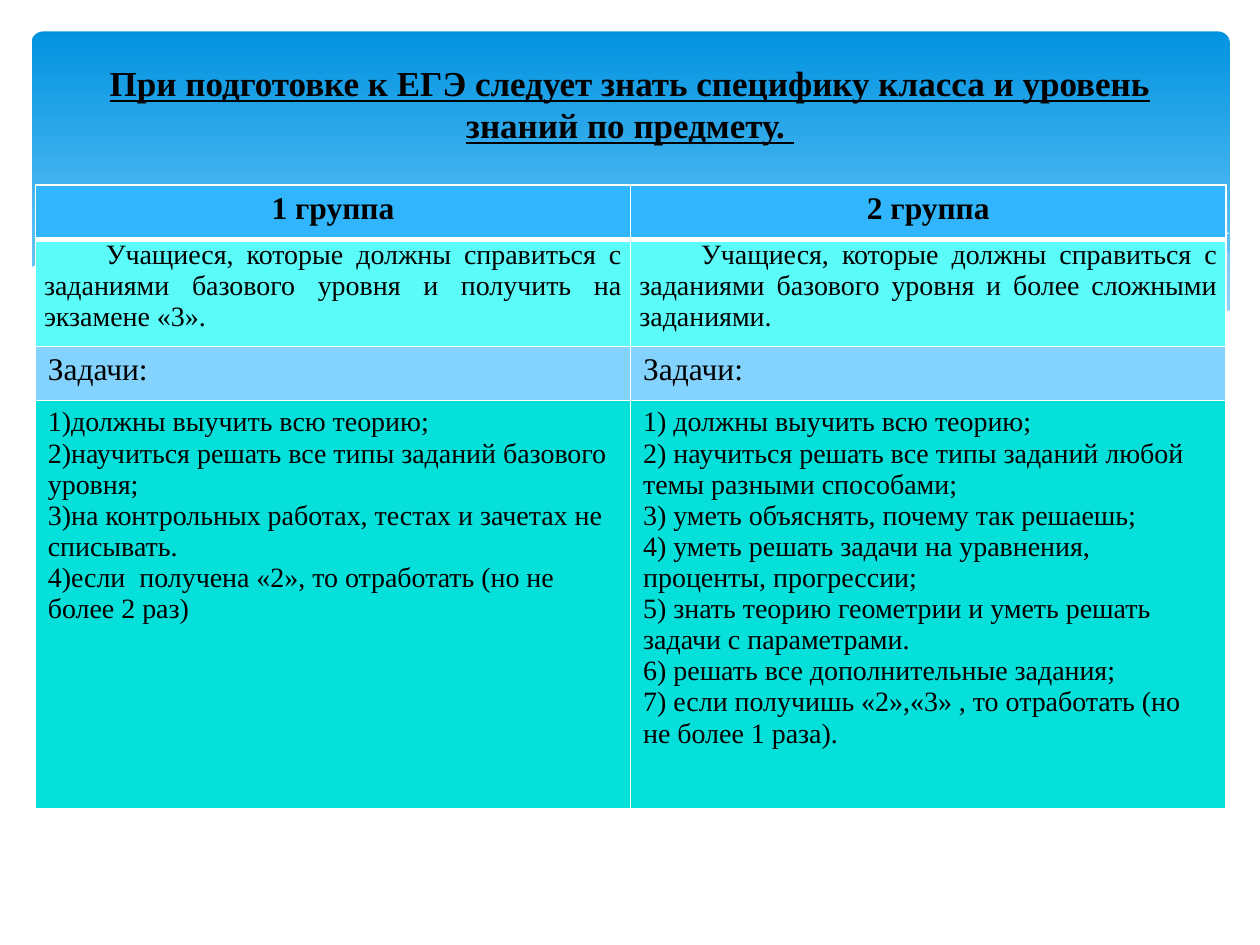
import lxml.etree
import pptx
import pptx.dml.color
import pptx.enum.shapes
import pptx.enum.text
import pptx.oxml.ns
import pptx.util

RGB = pptx.dml.color.RGBColor.from_string
ALIGN = pptx.enum.text.PP_ALIGN
SHAPE = pptx.enum.shapes.MSO_SHAPE
qn = pptx.oxml.ns.qn

theme = {
    "font": "Times New Roman", "text": "000000", "white": "FFFFFF", "mist": "C6E7FC",
    "sky": ("0293E0", "83D3FE"),
    "rows": ("31B6FD", "5AFBF8", "83D3FE", "05E0DB"),
    "title": 20, "sizes": (18, 16, 18, 16),
}

prs = pptx.Presentation()
prs.slide_width, prs.slide_height = pptx.util.Inches(10), pptx.util.Inches(7.5)
col = row = prs.slide_width // 10
s = prs.slides.add_slide(prs.slide_layouts[6])


def add_text(p, text, size, bold=False, underline=False):
    r = p.add_run()
    r.text = text
    r.font.name, r.font.size = theme["font"], pptx.util.Pt(size)
    r.font.bold, r.font.underline = bold, underline
    r.font.color.rgb = RGB(theme["text"])


def add_wave(points, color, alpha=100, closed=True):
    builder = s.shapes.build_freeform(*points[0], scale=col / 100)
    builder.add_line_segments(points[1:], close=closed)
    sp = builder.convert_to_shape()
    sp.shadow.inherit = False
    if not closed:
        sp.fill.background()
        sp.line.color.rgb, sp.line.width = RGB(color), 0
        return
    sp.line.fill.background()
    sp.fill.solid()
    sp.fill.fore_color.rgb = RGB(color)
    if alpha < 100:
        clr = sp.fill._xPr.find(".//" + qn("a:srgbClr"))
        lxml.etree.SubElement(clr, qn("a:alpha"), val=str(alpha * 1000))


sky = s.shapes.add_shape(SHAPE.ROUNDED_RECTANGLE, int(0.25 * col), int(0.25 * row),
                         int(9.51 * col), int(2.7 * row))
sky.shadow.inherit = False
sky.adjustments[0] = 0.034
sky.line.fill.background()
sky.fill.gradient()
sky.fill.gradient_angle = 270
for stop, color, position in zip(sky.fill.gradient_stops, theme["sky"], (0, 0.9)):
    stop.color.rgb, stop.position = RGB(color), position

add_wave([(976, 200), (935, 207), (891, 216), (832, 230), (779, 242), (729, 253), (661, 265),
          (705, 271), (757, 276), (803, 278), (854, 276), (897, 270), (935, 262), (976, 247)],
         theme["mist"], 29)
add_wave([(893, 273), (837, 265), (775, 254), (706, 240), (629, 222), (569, 208), (514, 198),
          (465, 191), (420, 187), (380, 185), (328, 187), (286, 191), (342, 199), (404, 211),
          (449, 222), (530, 240), (601, 255), (665, 266), (722, 274), (773, 277), (818, 278),
          (857, 277)], theme["mist"], 40)
add_wave([(309, 195), (344, 190), (387, 187), (433, 187), (489, 190), (556, 197), (636, 208),
          (695, 219), (760, 233), (831, 251), (907, 272)], theme["white"], closed=False)
add_wave([(613, 257), (672, 241), (748, 223), (806, 210), (866, 199), (924, 190), (975, 185)],
         theme["white"], closed=False)
add_wave([(977, 246), (940, 259), (899, 269), (850, 275), (809, 277), (761, 275), (708, 270),
          (648, 262), (579, 250), (503, 233), (447, 220), (391, 207), (340, 197), (292, 190),
          (250, 186), (211, 184), (161, 184), (119, 187), (85, 193), (59, 199), (40, 205),
          (23, 213), (23, 329), (977, 329)], theme["white"])

table_rows = [
    ("1 группа", "2 группа"),
    ("Учащиеся, которые должны справиться с заданиями базового уровня и получить на экзамене «3».",
     "Учащиеся, которые должны справиться с заданиями базового уровня и более сложными заданиями."),
    ("Задачи:", "Задачи:"),
    ("1)должны выучить всю теорию;\n"
     "2)научиться решать все типы заданий базового уровня;\n"
     "3)на контрольных работах, тестах и зачетах не списывать.\n"
     "4)если  получена «2», то отработать (но не более 2 раз)",
     "1) должны выучить всю теорию;\n"
     "2) научиться решать все типы заданий любой темы разными способами;\n"
     "3) уметь объяснять, почему так решаешь;\n"
     "4) уметь решать задачи на уравнения, проценты, прогрессии;\n"
     "5) знать теорию геометрии и уметь решать задачи с параметрами.\n"
     "6) решать все дополнительные задания;\n"
     "7) если получишь «2»,«3» , то отработать (но не более 1 раза)."),
]
heights = (0.43, 0.85, 0.43, 3.24)
aligns = (ALIGN.CENTER, ALIGN.JUSTIFY, ALIGN.LEFT, ALIGN.LEFT)
table = s.shapes.add_table(4, 2, int(0.28 * col), int(1.47 * row),
                           int(9.45 * col), int(sum(heights) * row)).table

for i, texts in enumerate(table_rows):
    table.rows[i].height = int(heights[i] * row)
    for j, text in enumerate(texts):
        cell = table.cell(i, j)
        tcPr = cell._tc.get_or_add_tcPr()
        for side in ("L", "R", "T", "B"):
            thick = (i, side) in ((0, "B"), (1, "T"))
            ln = lxml.etree.SubElement(tcPr, qn("a:ln" + side),
                                       w=str(pptx.util.Pt(3 if thick else 1)))
            fill = lxml.etree.SubElement(ln, qn("a:solidFill"))
            lxml.etree.SubElement(fill, qn("a:srgbClr"), val=theme["white"])
        cell.fill.solid()
        cell.fill.fore_color.rgb = RGB(theme["rows"][i])
        if i == 1:
            cell.margin_left = cell.margin_right = int(0.07 * col)
            cell.margin_top = cell.margin_bottom = 0
        tf = cell.text_frame
        for n, line in enumerate(text.split("\n")):
            p = tf.add_paragraph() if n else tf.paragraphs[0]
            p.alignment = aligns[i]
            if i == 1:
                p._p.get_or_add_pPr().set("indent", str(int(0.49 * col)))
            add_text(p, line, theme["sizes"][i], bold=i == 0)

title = s.shapes.add_textbox(int(0.5 * col), int(0.44 * row), 9 * col, int(1.02 * row))
tf = title.text_frame
tf.word_wrap = True
p = tf.paragraphs[0]
p.alignment = ALIGN.CENTER
add_text(p, "При подготовке к ЕГЭ следует знать специфику класса и уровень знаний по предмету. ",
         theme["title"], bold=True, underline=True)

prs.save("out.pptx")
